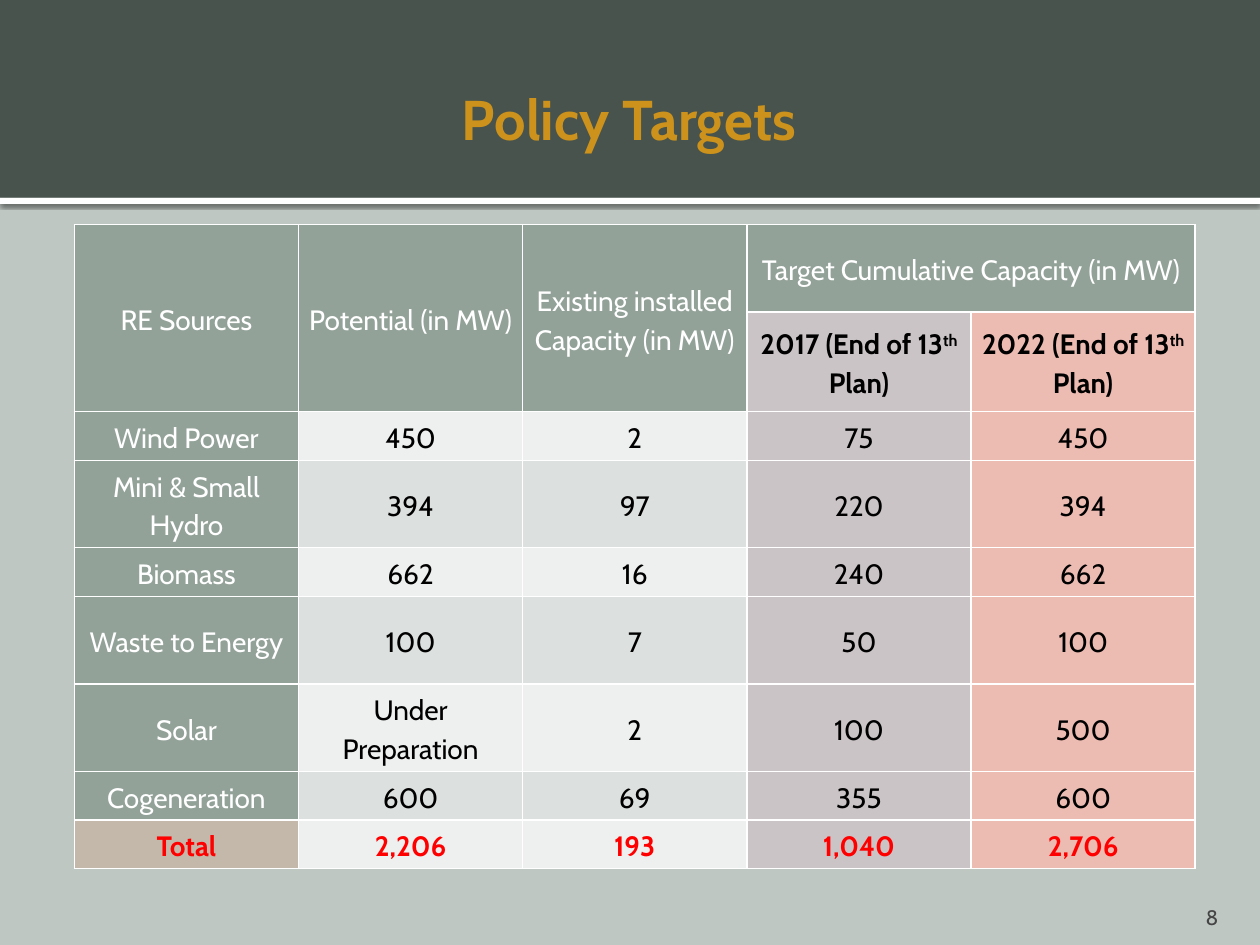
import pptx
import pptx.util
import pptx.dml.color
import pptx.enum.shapes
import pptx.enum.text
import pptx.oxml
import pptx.oxml.ns

Pt = pptx.util.Pt
ALIGN = pptx.enum.text.PP_ALIGN
ANCHOR = pptx.enum.text.MSO_ANCHOR
NS = pptx.oxml.ns.nsdecls("a")

SAGE, MAUVE, SALMON, TAN = "93A299", "CAC4C6", "ECBBB2", "C3B8A9"
STRIPES = "EEF0EF", "DCE0DE"
WHITE, BLACK, RED = "FFFFFF", "000000", "FF0000"


def rgb(value):
    return pptx.dml.color.RGBColor.from_string(value)


class Deck:
    font = "Cabin"

    def __init__(self, width, height, background):
        self.prs = pptx.Presentation()
        self.prs.slide_width, self.prs.slide_height = Pt(width), Pt(height)
        self.s = self.prs.slides.add_slide(self.prs.slide_layouts[6])
        self.s.background.fill.solid()
        self.s.background.fill.fore_color.rgb = rgb(background)

    def run(self, p, text, size, color, bold=False, raised=False):
        r = p.add_run()
        r.text = text
        r.font.name, r.font.size, r.font.bold = self.font, Pt(size), bold
        r.font.color.rgb = rgb(color)
        if raised:
            r.font._element.set("baseline", "30000")

    def band(self, x, y, w, h, color, shadow=False):
        sp = self.s.shapes.add_shape(
            pptx.enum.shapes.MSO_SHAPE.RECTANGLE, Pt(x), Pt(y), Pt(w), Pt(h))
        sp.shadow.inherit = False
        sp.fill.solid()
        sp.fill.fore_color.rgb = rgb(color)
        sp.line.fill.background()
        if shadow:
            effects = sp._element.spPr.find(pptx.oxml.ns.qn("a:effectLst"))
            effects.append(pptx.oxml.parse_xml(
                f'<a:outerShdw {NS} blurRad="{Pt(2.5)}" dist="{Pt(0.8)}" dir="5400000">'
                '<a:srgbClr val="000000"><a:alpha val="60000"/></a:srgbClr></a:outerShdw>'))

    def text(self, x, y, w, h, text, size, color, align, anchor, insets, bold=False):
        tf = self.s.shapes.add_textbox(Pt(x), Pt(y), Pt(w), Pt(h)).text_frame
        tf.word_wrap = True
        tf.vertical_anchor = anchor
        tf.margin_left, tf.margin_top, tf.margin_right, tf.margin_bottom = map(Pt, insets)
        p = tf.paragraphs[0]
        p.alignment = align
        self.run(p, text, size, color, bold)

    def table(self, x, y, widths, heights):
        table = self.s.shapes.add_table(
            len(heights), len(widths), Pt(x), Pt(y),
            Pt(sum(widths)), Pt(sum(heights))).table
        for column, width in zip(table.columns, widths):
            column.width = Pt(width)
        for row, height in zip(table.rows, heights):
            row.height = Pt(height)
        return table

    def cell(self, cell, text, fill, color, bold=False):
        cell.margin_left = cell.margin_right = Pt(5)
        cell.margin_top = cell.margin_bottom = Pt(0)
        cell.vertical_anchor = ANCHOR.MIDDLE
        tcPr = cell._tc.get_or_add_tcPr()
        for side in ("lnL", "lnR", "lnT", "lnB"):
            tcPr.append(pptx.oxml.parse_xml(
                f'<a:{side} {NS} w="{Pt(1)}"><a:solidFill><a:srgbClr val="{WHITE}"/>'
                f'</a:solidFill></a:{side}>'))
        cell.fill.solid()
        cell.fill.fore_color.rgb = rgb(fill)
        p = cell.text_frame.paragraphs[0]
        p.alignment = ALIGN.CENTER
        p.line_spacing = 1.15
        for i, part in enumerate(text.split("^")):
            if part:
                self.run(p, part, 16, color, bold, raised=i % 2 == 1)


def main():
    deck = Deck(720, 540, "BEC7C2")
    deck.band(0, 113, 720, 3.6, WHITE, shadow=True)
    deck.band(0, 0, 720, 113, "47534C")
    deck.text(31, 43.2, 653.8, 48.2, "Policy Targets", 32, "CD921B",
              ALIGN.CENTER, ANCHOR.MIDDLE, (7.2, 3.6, 3.6, 3.6), bold=True)
    deck.text(645.8, 509.8, 57.6, 21.6, "8", 12, "454545",
              ALIGN.RIGHT, ANCHOR.BOTTOM, (7.2, 3.6, 7.2, 0))

    rows = [
        ("RE Sources", "Potential (in MW)", "Existing installed Capacity (in MW)",
         "Target Cumulative Capacity (in MW)", ""),
        ("", "", "", "2017 (End of 13^th^ Plan)", "2022 (End of 13^th^ Plan)"),
        ("Wind Power", "450", "2", "75", "450"),
        ("Mini & Small Hydro", "394", "97", "220", "394"),
        ("Biomass", "662", "16", "240", "662"),
        ("Waste to Energy", "100", "7", "50", "100"),
        ("Solar", "Under Preparation", "2", "100", "500"),
        ("Cogeneration", "600", "69", "355", "600"),
        ("Total", "2,206", "193", "1,040", "2,706"),
    ]
    short, tall = 27.8, 50
    heights = [tall, 57, short, tall, short, tall, tall, short, short]
    table = deck.table(42.5, 128.3, [128.1] * 5, heights)
    for col in range(3):
        table.cell(0, col).merge(table.cell(1, col))
    table.cell(0, 3).merge(table.cell(0, 4))

    last = len(rows) - 1
    for i, row in enumerate(rows):
        stripe = STRIPES[i % 2]
        fills = [TAN if i == last else SAGE, stripe, stripe, MAUVE, SALMON]
        for j, text in enumerate(row):
            header = i == 0 or (i == 1 and j < 3)
            color = RED if i == last else WHITE if header or j == 0 else BLACK
            deck.cell(table.cell(i, j), text, SAGE if header else fills[j],
                      color, bold=i in (1, last))
    deck.prs.save("out.pptx")


if __name__ == "__main__":
    main()
